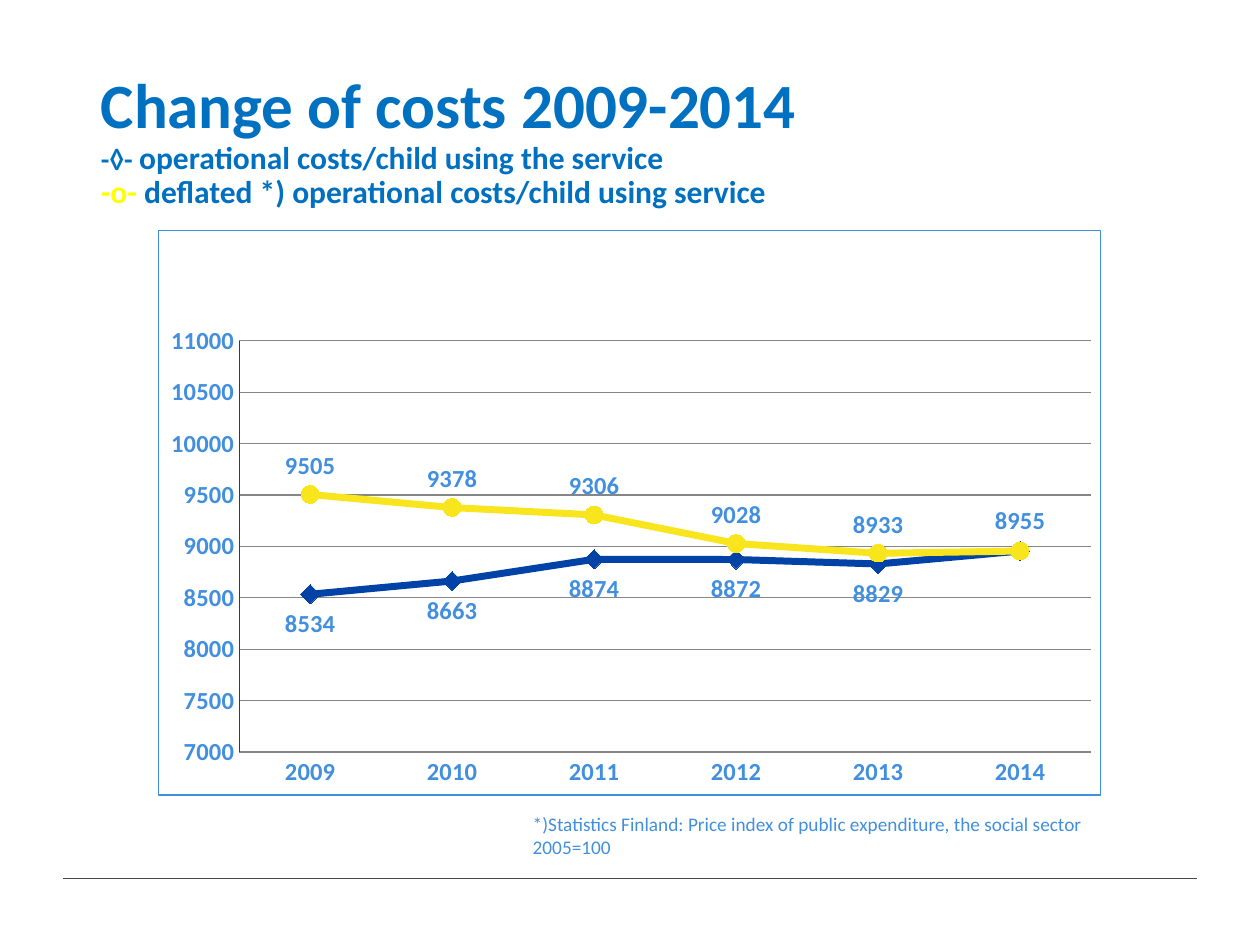
"""Build the slide on the change of child care costs 2009-2014."""
from dataclasses import dataclass

from lxml import etree
from pptx import Presentation
from pptx import util as u
from pptx.chart.data import CategoryChartData
from pptx.dml.color import RGBColor
from pptx.enum import chart as ch, shapes, text
from pptx.oxml import parse_xml
from pptx.oxml.ns import nsdecls, qn

W, H = 10, 7.5
FONT = "Calibri"
COLORS = {"title": "0070C0", "bright": "FFFF00", "text": "418FDE", "navy": "0042A5",
          "yellow": "F9E51E", "grid": "868686", "rule": "474A4C"}
YEARS = [str(year) for year in range(2009, 2015)]
PLOT = {"x": 0.086, "y": 0.196, "w": 0.904, "h": 0.728}


@dataclass(frozen=True)
class Box:
    """A place on the slide, as shares of its width and height."""
    x: float
    y: float
    w: float
    h: float

    def emu(self) -> list[int]:
        return [u.Inches(v) for v in (self.x * W, self.y * H, self.w * W, self.h * H)]


@dataclass(frozen=True)
class Run:
    text: str
    size: float
    color: str = "title"
    bold: bool = True


@dataclass(frozen=True)
class Series:
    name: str
    values: tuple[int, ...]
    color: str
    marker: ch.XL_MARKER_STYLE
    marker_size: int
    label_side: ch.XL_LABEL_POSITION


TITLE = [
    [Run("Change of costs 2009-2014", 36)],
    [Run("-◊- ", 16), Run("operational costs/child using the service", 18)],
    [Run("-o- ", 18, "bright"), Run("deflated *) operational costs/child using service", 18)],
]
NOTE = [[Run("*)Statistics Finland: Price index of public expenditure, "
             "the social sector 2005=100", 11, "text", False)]]
SERIES = [
    Series("Series 1", (8534, 8663, 8874, 8872, 8829, 8955), "navy",
           ch.XL_MARKER_STYLE.DIAMOND, 11, ch.XL_LABEL_POSITION.BELOW),
    Series("Series 2", (9505, 9378, 9306, 9028, 8933, 8955), "yellow",
           ch.XL_MARKER_STYLE.CIRCLE, 10, ch.XL_LABEL_POSITION.ABOVE),
]


def rgb(name: str) -> RGBColor:
    return RGBColor.from_string(COLORS[name])


def style_font(font, size: float, color: str, bold: bool) -> None:
    font.name, font.size, font.bold = FONT, u.Pt(size), bold
    font.color.rgb = rgb(color)


def style_line(line, color: str, width: float) -> None:
    line.color.rgb = rgb(color)
    line.width = u.Pt(width)


def write(tf, lines: list[list[Run]], spacing: float = 1.0) -> None:
    tf.word_wrap = True
    for i, runs in enumerate(lines):
        p = tf.add_paragraph() if i else tf.paragraphs[0]
        p.alignment = text.PP_ALIGN.LEFT
        p.line_spacing = spacing
        for run in runs:
            r = p.add_run()
            r.text = run.text
            style_font(r.font, run.size, run.color, run.bold)


def frame_chart(chart) -> None:
    """Fix the inner plot area and put a border round the chart."""
    area = chart.element.find(".//" + qn("c:plotArea"))
    for old in area.findall(qn("c:layout")):
        area.remove(old)
    sizes = "".join(f'<c:{k} val="{v}"/>' for k, v in PLOT.items())
    area.insert(0, parse_xml(
        f'<c:layout {nsdecls("c")}><c:manualLayout><c:layoutTarget val="inner"/>'
        f'<c:xMode val="edge"/><c:yMode val="edge"/>{sizes}</c:manualLayout></c:layout>'))
    chart.element.find(qn("c:chart")).addnext(parse_xml(
        f'<c:spPr {nsdecls("c", "a")}><a:noFill/><a:ln w="9525"><a:solidFill>'
        f'<a:srgbClr val="{COLORS["text"]}"/></a:solidFill></a:ln></c:spPr>'))


def style_series(plot_series, item: Series) -> None:
    plot_series.smooth = False
    style_line(plot_series.format.line, item.color, 4)
    marker = plot_series.marker
    marker.style, marker.size = item.marker, item.marker_size
    marker.format.fill.solid()
    marker.format.fill.fore_color.rgb = rgb(item.color)
    style_line(marker.format.line, item.color, 0.75)
    labels = plot_series.data_labels
    labels.show_value = True
    labels.position = item.label_side


def hide_label(plot_series, index: int) -> None:
    plot_series.data_labels._element.insert(0, parse_xml(
        f'<c:dLbl {nsdecls("c")}><c:idx val="{index}"/><c:delete val="1"/></c:dLbl>'))


def add_cost_chart(s, box: Box) -> None:
    data = CategoryChartData(number_format="0")
    data.categories = YEARS
    for item in SERIES:
        data.add_series(item.name, item.values)
    chart = s.shapes.add_chart(ch.XL_CHART_TYPE.LINE_MARKERS, *box.emu(), data).chart
    chart.has_legend = chart.has_title = False
    style_font(chart.font, 14, "text", True)
    frame_chart(chart)

    axis = chart.value_axis
    axis.minimum_scale, axis.maximum_scale, axis.major_unit = 7000, 11000, 500
    axis.tick_labels.number_format = "0"
    axis.tick_labels.number_format_is_linked = False
    style_line(axis.format.line, "navy", 0.75)
    style_line(axis.major_gridlines.format.line, "grid", 0.75)
    style_line(chart.category_axis.format.line, "grid", 0.75)
    for each in (axis, chart.category_axis):
        each.major_tick_mark = each.minor_tick_mark = ch.XL_TICK_MARK.NONE

    plot = chart.plots[0]
    plot.vary_by_categories = False
    for plot_series, item in zip(plot.series, SERIES):
        style_series(plot_series, item)
    nominal, deflated = plot.series
    last = len(YEARS) - 1
    nominal.points[last].data_label.position = ch.XL_LABEL_POSITION.ABOVE
    hide_label(deflated, last)


def add_rule(s, x1: float, x2: float, y: float) -> None:
    line = s.shapes.add_connector(shapes.MSO_CONNECTOR.STRAIGHT, u.Inches(x1 * W),
                                  u.Inches(y * H), u.Inches(x2 * W), u.Inches(y * H))
    style_line(line.line, "rule", 0.5)
    etree.SubElement(line._element.spPr, qn("a:effectLst"))


def main() -> None:
    prs = Presentation()
    prs.slide_width, prs.slide_height = u.Inches(W), u.Inches(H)
    s = prs.slides.add_slide(prs.slide_layouts[5])
    add_rule(s, 0.05, 0.95, 0.93)

    title = s.shapes.title
    title.left, title.top, title.width, title.height = Box(0.07, 0.05, 0.86, 0.2).emu()
    title.text_frame.auto_size = text.MSO_AUTO_SIZE.NONE
    title.text_frame.vertical_anchor = text.MSO_ANCHOR.MIDDLE
    write(title.text_frame, TITLE, 0.9)

    add_cost_chart(s, Box(0.125, 0.243, 0.749, 0.599))
    note = s.shapes.add_textbox(*Box(0.413, 0.853, 0.477, 0.063).emu())
    write(note.text_frame, NOTE)
    prs.save("out.pptx")


if __name__ == "__main__":
    main()
